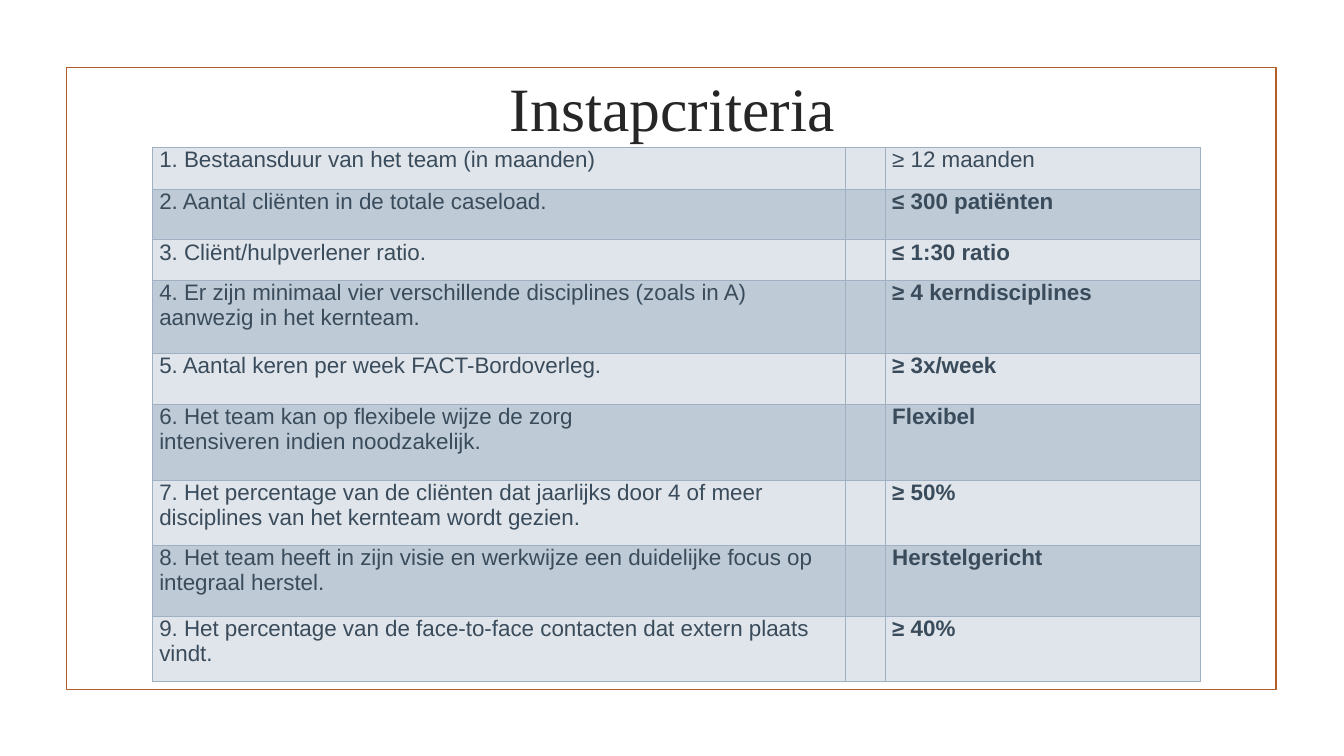
from lxml import etree
from pptx import Presentation
from pptx.dml.color import RGBColor
from pptx.enum.shapes import MSO_SHAPE
from pptx.enum.text import MSO_ANCHOR, PP_ALIGN
from pptx.oxml.ns import qn
from pptx.util import Inches, Pt

RECTANGLE = MSO_SHAPE.RECTANGLE
MIDDLE = MSO_ANCHOR.MIDDLE
CENTER = PP_ALIGN.CENTER
LEFT = PP_ALIGN.LEFT

RUST = RGBColor(0xB1, 0x5E, 0x28)
INK = RGBColor(0x26, 0x26, 0x26)
SLATE = RGBColor(0x3A, 0x4B, 0x5B)
GRID = RGBColor(0x9E, 0xB0, 0xC1)
BANDS = (RGBColor(0xDF, 0xE5, 0xEA), RGBColor(0xBE, 0xCB, 0xD6))

COLUMN_WIDTHS = (6.88, 0.39, 3.13)
CRITERIA = [
    (0.42, "1. Bestaansduur van het team (in maanden)", "≥ 12 maanden"),
    (0.5, "2. Aantal cliënten in de totale caseload.", "≤ 300 patiënten"),
    (0.4, "3. Cliënt/hulpverlener ratio.", "≤ 1:30 ratio"),
    (0.73, "4. Er zijn minimaal vier verschillende disciplines (zoals in A) "
           "aanwezig in het kernteam.", "≥ 4 kerndisciplines"),
    (0.5, "5. Aantal keren per week FACT-Bordoverleg.", "≥ 3x/week"),
    (0.76, "6. Het team kan op flexibele wijze de zorg\v"
           "intensiveren indien noodzakelijk.", "Flexibel"),
    (0.64, "7. Het percentage van de cliënten dat jaarlijks door 4 of meer "
           "disciplines van het kernteam wordt gezien.", "≥ 50%"),
    (0.71, "8. Het team heeft in zijn visie en werkwijze een duidelijke focus op "
           "integraal herstel.", "Herstelgericht"),
    (0.64, "9. Het percentage van de face-to-face contacten dat extern plaats "
           "vindt.", "≥ 40%"),
]


def write_text(tf, text, font="Arial", size=16, color=SLATE, bold=False, align=LEFT):
    p = tf.paragraphs[0]
    p.text = text
    p.alignment = align
    for r in p.runs:
        r.font.name = font
        r.font.size = Pt(size)
        r.font.color.rgb = color
        r.font.bold = bold


def add_borders(cell, color=GRID, width=1):
    tc_pr = cell._tc.get_or_add_tcPr()
    for index, side in enumerate(("lnL", "lnR", "lnT", "lnB")):
        ln = etree.Element(qn(f"a:{side}"), w=str(Pt(width)))
        fill = etree.SubElement(ln, qn("a:solidFill"))
        etree.SubElement(fill, qn("a:srgbClr"), val=str(color))
        tc_pr.insert(index, ln)


class SlideBuilder:
    def __init__(self, slide):
        self.shapes = slide.shapes

    def frame(self, left, top, width, height):
        sp = self.shapes.add_shape(
            RECTANGLE, Inches(left), Inches(top), Inches(width), Inches(height))
        sp.shadow.inherit = False
        sp.fill.background()
        sp.line.color.rgb = RUST
        sp.line.width = Pt(1.25)

    def title(self, text, left, top, width, height):
        sp = self.shapes.add_textbox(
            Inches(left), Inches(top), Inches(width), Inches(height))
        tf = sp.text_frame
        tf.word_wrap = True
        tf.vertical_anchor = MIDDLE
        write_text(tf, text, font="Times New Roman", size=44, color=INK, align=CENTER)

    def criteria_table(self, criteria, left, top):
        height = sum(row[0] for row in criteria)
        table = self.shapes.add_table(
            len(criteria), len(COLUMN_WIDTHS), Inches(left), Inches(top),
            Inches(sum(COLUMN_WIDTHS)), Inches(height)).table
        table.first_row = False
        table.horz_banding = False
        for column, width in zip(table.columns, COLUMN_WIDTHS):
            column.width = Inches(width)
        for i, (row_height, criterion, norm) in enumerate(criteria):
            table.rows[i].height = Inches(row_height)
            for j, text in enumerate((criterion, "", norm)):
                cell = table.cell(i, j)
                cell.margin_left = cell.margin_right = Inches(0.07)
                cell.margin_top = cell.margin_bottom = 0
                cell.fill.solid()
                cell.fill.fore_color.rgb = BANDS[i % 2]
                add_borders(cell)
                if text:
                    write_text(cell.text_frame, text, bold=j == 2 and i > 0)


def main():
    prs = Presentation()
    prs.slide_width = Inches(13.33)
    prs.slide_height = Inches(7.5)
    s = prs.slides.add_slide(prs.slide_layouts[6])
    builder = SlideBuilder(s)
    builder.frame(0.66, 0.67, 12, 6.17)
    builder.criteria_table(CRITERIA, 1.51, 1.46)
    builder.title("Instapcriteria", 1.42, 0.35, 10.5, 1.43)
    prs.save("out.pptx")


if __name__ == "__main__":
    main()
